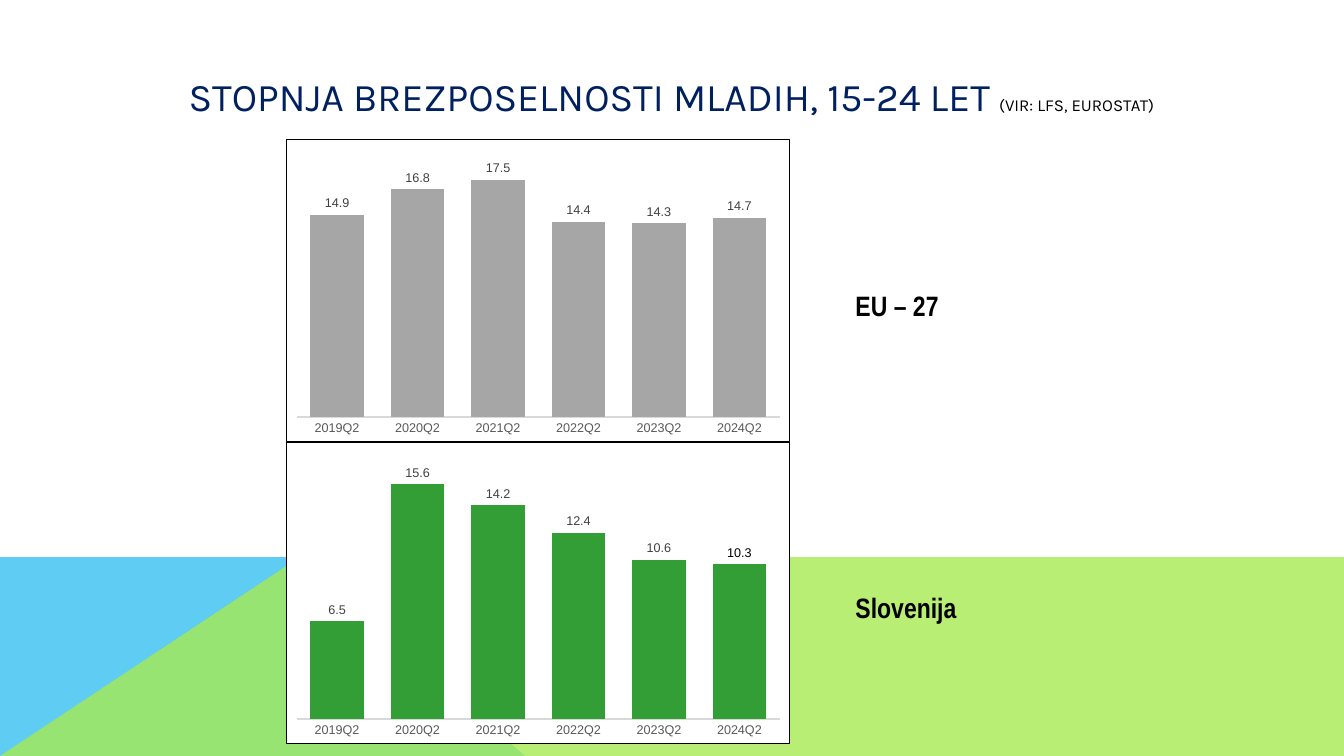
from dataclasses import dataclass
from lxml import etree
from pptx import Presentation
from pptx.chart.data import CategoryChartData
from pptx.dml.color import RGBColor
from pptx.enum.chart import XL_CHART_TYPE as ChartType, XL_LABEL_POSITION as LabelPosition
from pptx.enum.chart import XL_TICK_LABEL_POSITION as TickLabels, XL_TICK_MARK as TickMark
from pptx.enum.text import MSO_ANCHOR as Anchor, MSO_AUTO_SIZE as AutoSize, PP_ALIGN as Align
from pptx.oxml import parse_xml
from pptx.oxml.ns import nsdecls, qn
from pptx.util import Pt

# Content
TITLE = "STOPNJA BREZPOSELNOSTI MLADIH, 15-24 LET "
SOURCE = "(VIR: LFS, EUROSTAT)"
QUARTERS = ["2019Q2", "2020Q2", "2021Q2", "2022Q2", "2023Q2", "2024Q2"]
REGIONS = [
    dict(name="EU – 27", rates=[14.9, 16.8, 17.5, 14.4, 14.3, 14.7],
         color="A6A6A6", axis_top=20, highlight=None),
    dict(name="Slovenija", rates=[6.5, 15.6, 14.2, 12.4, 10.6, 10.3],
         color="339E35", axis_top=18, highlight=5),
]


@dataclass(frozen=True)
class Theme:
    title_font: str = "Karla"
    label_font: str = "Arial Narrow"
    chart_font: str = "Arial"
    navy: str = "002060"
    black: str = "000000"
    white: str = "FFFFFF"
    sky: str = "5ECCF3"
    lime: str = "A7EA52"
    axis_line: str = "D9D9D9"
    axis_text: str = "595959"
    value_text: str = "404040"
    title_size: float = 28
    source_size: float = 12
    label_size: float = 20
    chart_size: float = 10
    small_size: float = 9


THEME = Theme()

# Geometry in points
WIDTH, HEIGHT = 960, 540
BAND_TOP = 397.5
FOLD = 214
CHART_LEFT, CHART_TOP, CHART_WIDTH, CHART_HEIGHT = 204.5, 99.5, 360, 216
LABEL_LEFT, LABEL_OFFSET, LABEL_WIDTH, LABEL_HEIGHT = 604, 103, 122, 32
PLOT = dict(x=0.02, y=0.02, w=0.96, h=0.9)


def style_font(font, name, size, color, bold=False):
    font.name, font.size, font.bold = name, Pt(size), bold
    font.color.rgb = RGBColor.from_string(color)


def add_band(slide, corners, color, opacity=None):
    builder = slide.shapes.build_freeform(*corners[0], scale=Pt(1))
    builder.add_line_segments(corners[1:], close=True)
    band = builder.convert_to_shape()
    band.shadow.inherit = False
    band.line.fill.background()
    band.fill.solid()
    band.fill.fore_color.rgb = RGBColor.from_string(color)
    if opacity:
        paint = band.element.spPr.find(qn("a:solidFill"))[0]
        etree.SubElement(paint, qn("a:alpha")).set("val", str(opacity * 1000))


def frame_chart(chart):
    """Give the chart a white, thinly outlined area and a fixed plot area."""
    root = chart.element
    area = parse_xml(
        f'<c:spPr {nsdecls("c", "a")}>'
        f'<a:solidFill><a:srgbClr val="{THEME.white}"/></a:solidFill>'
        f'<a:ln w="9525"><a:solidFill><a:srgbClr val="{THEME.black}"/></a:solidFill></a:ln>'
        '</c:spPr>')
    root.find(qn("c:txPr")).addprevious(area)
    plot_area = root.find(qn("c:chart")).find(qn("c:plotArea"))
    for layout in plot_area.findall(qn("c:layout")):
        plot_area.remove(layout)
    places = "".join(f'<c:{key} val="{value}"/>' for key, value in PLOT.items())
    plot_area.insert(0, parse_xml(
        f'<c:layout {nsdecls("c")}><c:manualLayout><c:layoutTarget val="inner"/>'
        f'<c:xMode val="edge"/><c:yMode val="edge"/>{places}</c:manualLayout></c:layout>'))


def add_rate_chart(slide, region, top):
    data = CategoryChartData(number_format="0.0")
    data.categories = QUARTERS
    data.add_series("Series 1", region["rates"])
    chart = slide.shapes.add_chart(
        ChartType.COLUMN_CLUSTERED, Pt(CHART_LEFT), Pt(top),
        Pt(CHART_WIDTH), Pt(CHART_HEIGHT), data).chart
    chart.has_title = chart.has_legend = False
    style_font(chart.font, THEME.chart_font, THEME.chart_size, THEME.black)
    frame_chart(chart)

    # Axes
    quarters, rates = chart.category_axis, chart.value_axis
    for axis in (quarters, rates):
        axis.has_major_gridlines = False
        axis.major_tick_mark = axis.minor_tick_mark = TickMark.NONE
        style_font(axis.tick_labels.font, THEME.chart_font, THEME.small_size, THEME.axis_text)
    quarters.format.line.width = Pt(1.5)
    quarters.format.line.color.rgb = RGBColor.from_string(THEME.axis_line)
    rates.minimum_scale, rates.maximum_scale = 0, region["axis_top"]
    rates.tick_label_position = TickLabels.NONE
    rates.format.line.fill.background()

    # Columns and their values
    plot = chart.plots[0]
    plot.gap_width, plot.overlap, plot.vary_by_categories = 50, -27, False
    series = plot.series[0]
    series.format.fill.solid()
    series.format.fill.fore_color.rgb = RGBColor.from_string(region["color"])
    labels = series.data_labels
    labels.show_value, labels.position = True, LabelPosition.OUTSIDE_END
    labels.number_format, labels.number_format_is_linked = "0.0", False
    style_font(labels.font, THEME.chart_font, THEME.small_size, THEME.value_text)
    if region["highlight"] is not None:
        label = series.points[region["highlight"]].data_label
        style_font(label.font, THEME.chart_font, THEME.small_size, THEME.black)
        label.position = LabelPosition.OUTSIDE_END


def add_region_label(slide, name, top):
    box = slide.shapes.add_textbox(Pt(LABEL_LEFT), Pt(top), Pt(LABEL_WIDTH), Pt(LABEL_HEIGHT))
    box.text_frame.word_wrap = True
    para = box.text_frame.paragraphs[0]
    para.text = name
    style_font(para.font, THEME.label_font, THEME.label_size, THEME.black, bold=True)


def fill_title(title):
    title.left, title.top, title.width, title.height = Pt(127.5), Pt(47), Pt(717), Pt(43)
    frame = title.text_frame
    frame.word_wrap, frame.auto_size = True, AutoSize.NONE
    frame.vertical_anchor = Anchor.MIDDLE
    para = frame.paragraphs[0]
    para.alignment = Align.LEFT
    for text, size, color in ((TITLE, THEME.title_size, THEME.navy),
                              (SOURCE, THEME.source_size, THEME.black)):
        span = para.add_run()
        span.text = text
        style_font(span.font, THEME.title_font, size, color)


def main():
    deck = Presentation()
    deck.slide_width, deck.slide_height = Pt(WIDTH), Pt(HEIGHT)
    slide = deck.slides.add_slide(deck.slide_layouts[5])

    # Coloured bands along the bottom
    add_band(slide, [(0, HEIGHT), (0, BAND_TOP), (FOLD, BAND_TOP), (375, HEIGHT)], THEME.sky)
    add_band(slide, [(0, HEIGHT), (FOLD, BAND_TOP), (WIDTH, BAND_TOP), (WIDTH, HEIGHT)],
             THEME.lime, opacity=80)

    fill_title(slide.shapes.title)

    # One chart and label per region, stacked
    for row, region in enumerate(REGIONS):
        top = CHART_TOP + row * CHART_HEIGHT
        add_rate_chart(slide, region, top)
        add_region_label(slide, region["name"], top + LABEL_OFFSET)

    deck.save("out.pptx")


if __name__ == "__main__":
    main()
